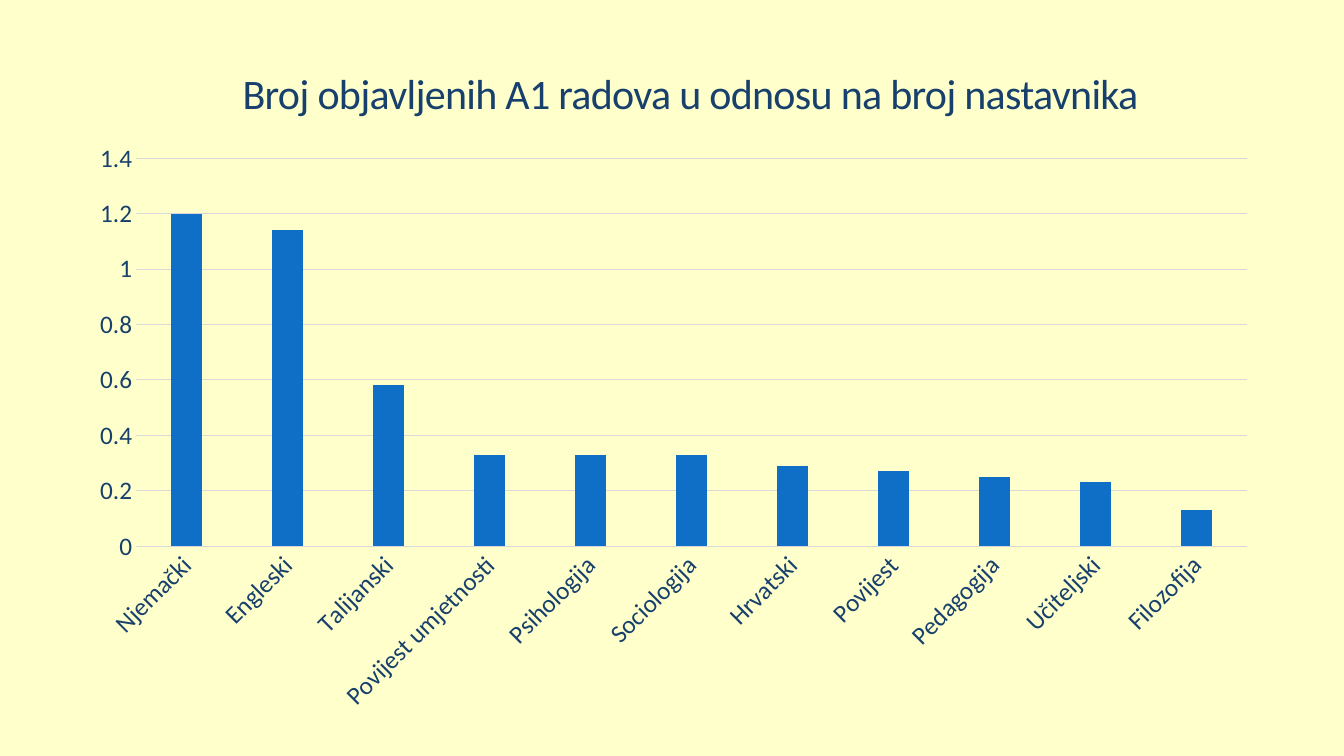
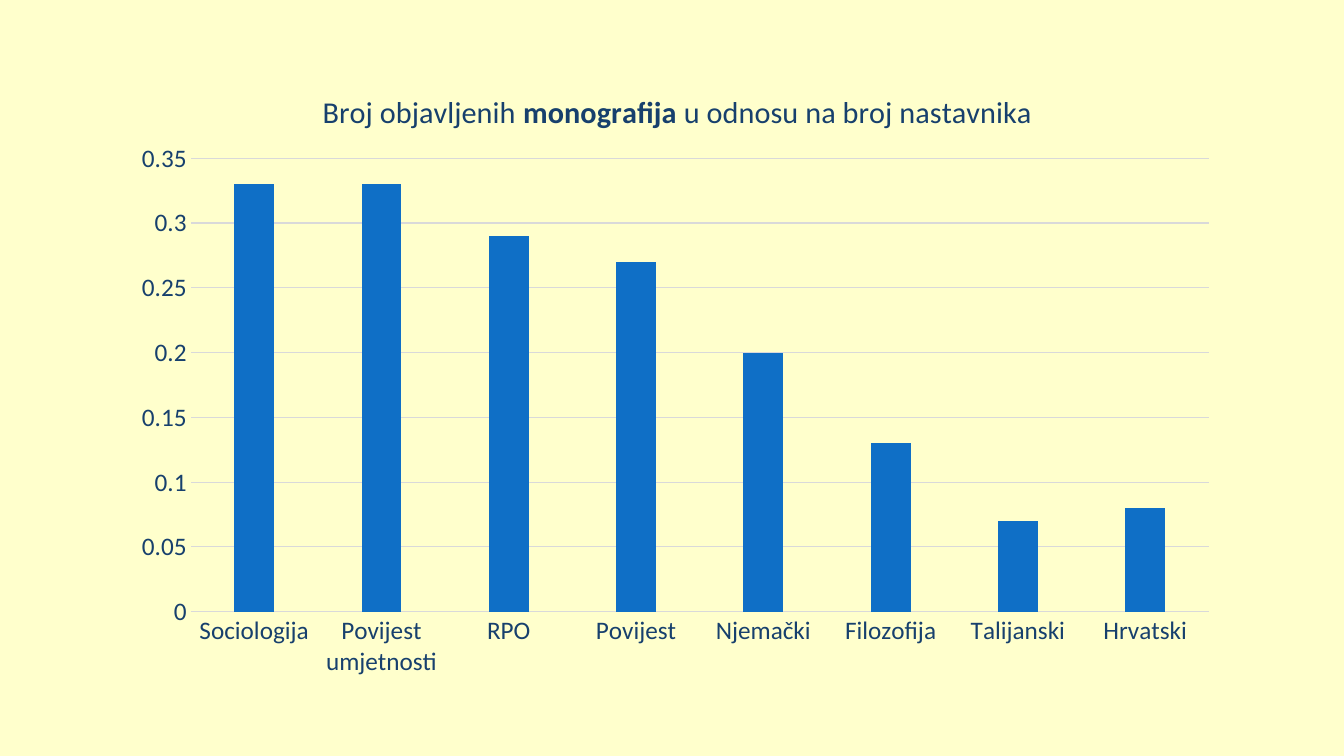
from lxml import etree
from pptx import Presentation
from pptx.chart.data import CategoryChartData
from pptx.dml.color import RGBColor
from pptx.enum.chart import XL_CHART_TYPE, XL_TICK_MARK
from pptx.enum.text import MSO_ANCHOR, PP_ALIGN
from pptx.oxml.ns import qn
from pptx.util import Inches, Pt

CREAM = RGBColor(0xFF, 0xFF, 0xCC)
NAVY = RGBColor(0x17, 0x40, 0x6D)
BLUE = RGBColor(0x0F, 0x6F, 0xC6)
GREY = RGBColor(0xD9, 0xD9, 0xD9)
FONT = "Calibri"

# Boxes are left, top, width, height in inches; plot is measured on the slide.
CHARTS = [
    {
        "heading": "Broj objavljenih A1 radova u odnosu na broj nastavnika",
        "box": (0.76, 1.3, 11.84, 5.86),
        "plot": (1.35, 1.57, 11.02, 3.85),
        "max": 1.4, "step": 0.2, "rotation": -45,
        "values": {
            "Njemački": 1.2, "Engleski": 1.14, "Talijanski": 0.58,
            "Povijest umjetnosti": 0.33, "Psihologija": 0.33,
            "Sociologija": 0.33, "Hrvatski": 0.29, "Povijest": 0.27,
            "Pedagogija": 0.25, "Učiteljski": 0.23, "Filozofija": 0.13,
        },
    },
    {
        "chart_title": [("Broj objavljenih ", False), ("monografija", True),
                        (" u odnosu na broj nastavnika", False)],
        "title_at": (3.17, 0.88),
        "box": (1.19, 0.65, 11.02, 6.2),
        "plot": (1.89, 1.57, 10.1, 4.5),
        "max": 0.35, "step": 0.05, "rotation": 0,
        "values": {
            "Sociologija": 0.33, "Povijest umjetnosti": 0.33, "RPO": 0.29,
            "Povijest": 0.27, "Njemački": 0.2, "Filozofija": 0.13,
            "Talijanski": 0.07, "Hrvatski": 0.08,
        },
    },
]


def style_font(font, size, bold=False):
    values = {"name": FONT, "size": Pt(size), "bold": bold}
    for name, value in values.items():
        setattr(font, name, value)
    font.color.rgb = NAVY


def set_layout(parent, index, box, area):
    """Fix a chart part at area, given in slide inches, inside the chart box."""
    for old in parent.findall(qn("c:layout")):
        parent.remove(old)
    layout = etree.Element(qn("c:layout"))
    manual = etree.SubElement(layout, qn("c:manualLayout"))
    left, top, width, height = box
    settings = {"xMode": "edge", "yMode": "edge",
                "x": (area[0] - left) / width, "y": (area[1] - top) / height}
    if len(area) == 4:
        target = etree.SubElement(manual, qn("c:layoutTarget"))
        target.set("val", "inner")
        settings.update(w=area[2] / width, h=area[3] / height)
    for tag, value in settings.items():
        etree.SubElement(manual, qn(f"c:{tag}")).set("val", str(value))
    parent.insert(index, layout)


prs = Presentation()
prs.slide_width, prs.slide_height = Inches(13.33), Inches(7.5)

for item in CHARTS:
    s = prs.slides.add_slide(prs.slide_layouts[6])
    s.background.fill.solid()
    s.background.fill.fore_color.rgb = CREAM

    if "heading" in item:
        title = s.shapes.add_textbox(
            Inches(1.1), Inches(0.45), Inches(11.5), Inches(0.77))
        tf = title.text_frame
        tf.word_wrap = True
        tf.vertical_anchor = MSO_ANCHOR.BOTTOM
        p = tf.paragraphs[0]
        p.alignment = PP_ALIGN.CENTER
        p.line_spacing = 0.85
        r = p.add_run()
        r.text = item["heading"]
        style_font(r.font, 30)
        r.font._element.set("spc", "-50")

    data = CategoryChartData()
    data.categories = list(item["values"])
    data.add_series("Series 1", list(item["values"].values()))
    box = item["box"]
    chart = s.shapes.add_chart(
        XL_CHART_TYPE.COLUMN_CLUSTERED, *map(Inches, box), data).chart
    style_font(chart.font, 18)
    chart.has_legend = False

    chart.has_title = "chart_title" in item
    if chart.has_title:
        p = chart.chart_title.text_frame.paragraphs[0]
        for text, bold in item["chart_title"]:
            r = p.add_run()
            r.text = text
            style_font(r.font, 21.6, bold)
        set_layout(chart.chart_title._element, 1, box, item["title_at"])

    plot = chart.plots[0]
    for name, value in {"gap_width": 219, "overlap": -27,
                        "vary_by_categories": False}.items():
        setattr(plot, name, value)
    fill = plot.series[0].format.fill
    fill.solid()
    fill.fore_color.rgb = BLUE

    cat, val = chart.category_axis, chart.value_axis
    for axis in (cat, val):
        axis.major_tick_mark = axis.minor_tick_mark = XL_TICK_MARK.NONE
        style_font(axis.tick_labels.font, 18)
    for name, value in {"minimum_scale": 0, "maximum_scale": item["max"],
                        "major_unit": item["step"],
                        "has_major_gridlines": True}.items():
        setattr(val, name, value)
    val.format.line.fill.background()
    for line in (cat.format.line, val.major_gridlines.format.line):
        line.color.rgb = GREY
        line.width = Pt(0.75)
    label_body = cat._element.find(qn("c:txPr")).find(qn("a:bodyPr"))
    label_body.set("rot", str(item["rotation"] * 60000))

    plot_area = chart._chartSpace.find(qn("c:chart")).find(qn("c:plotArea"))
    set_layout(plot_area, 0, box, item["plot"])

prs.save("out.pptx")
